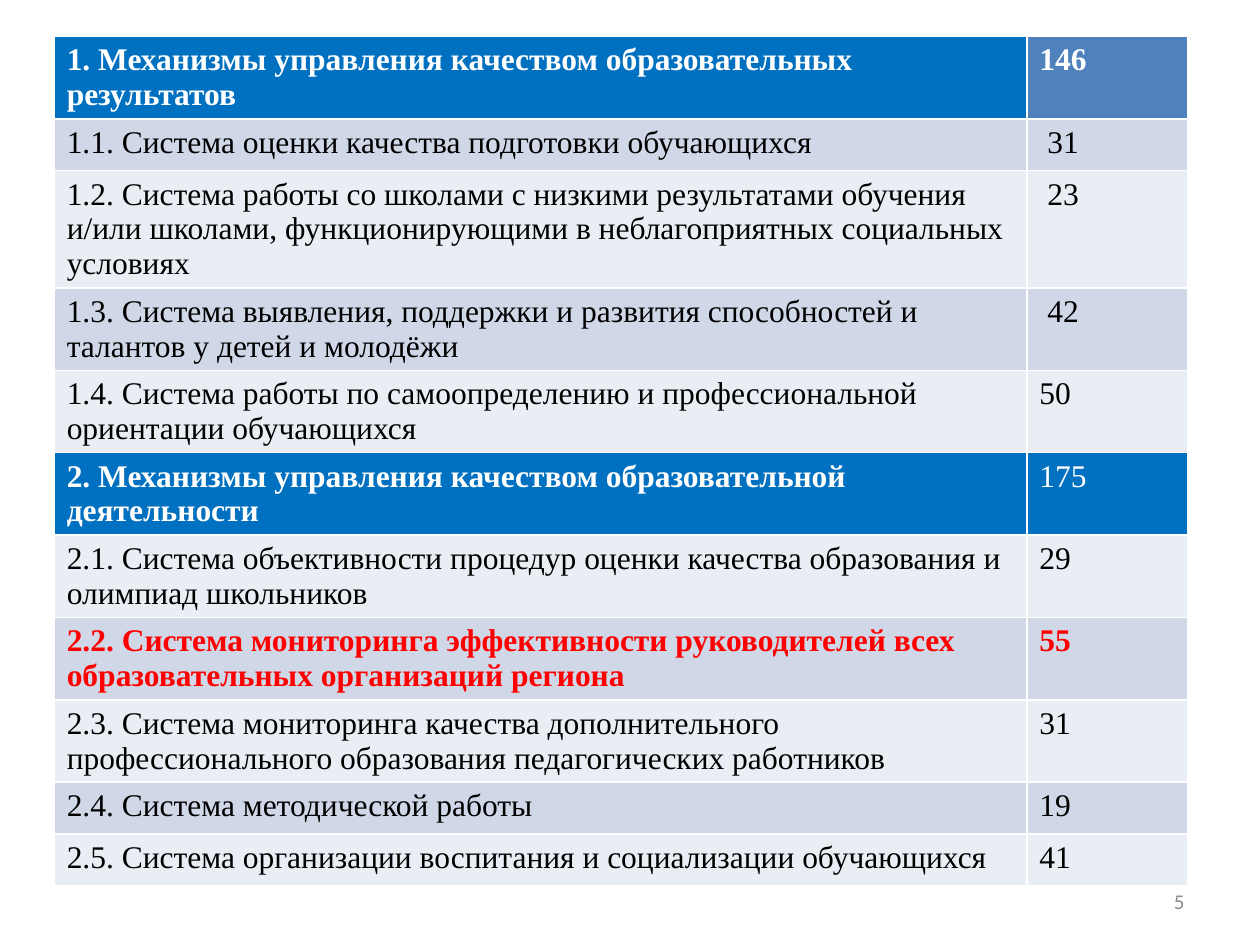
from pptx import Presentation
from pptx.dml.color import RGBColor
from pptx.enum.text import MSO_ANCHOR, PP_ALIGN
from pptx.util import Inches, Pt

MIDDLE = MSO_ANCHOR.MIDDLE
LEFT, RIGHT = PP_ALIGN.LEFT, PP_ALIGN.RIGHT

WHITE = RGBColor(0xFF, 0xFF, 0xFF)
BLACK = RGBColor(0, 0, 0)
RED = RGBColor(0xFF, 0, 0)
GRAY = RGBColor(0x8C, 0x8C, 0x8C)
SECTION_BLUE = RGBColor(0x00, 0x70, 0xC0)
TOTAL_BLUE = RGBColor(0x4F, 0x81, 0xBD)
BANDS = (RGBColor(0xE9, 0xED, 0xF4), RGBColor(0xD0, 0xD8, 0xE8))

SECTION, ITEM, ACCENT = "section", "item", "accent"
TEXT_COLORS = {SECTION: WHITE, ITEM: BLACK, ACCENT: RED}

# kind of row, name (one line per paragraph), score
ROWS = [
    (SECTION, "1. Механизмы управления качеством образовательных результатов", "146"),
    (ITEM, "1.1. Система оценки качества подготовки обучающихся", " 31"),
    (ITEM, "1.2. Система работы со школами с низкими результатами обучения и/или "
           "школами, функционирующими в неблагоприятных социальных условиях", " 23"),
    (ITEM, "1.3. Система выявления, поддержки и развития способностей и талантов "
           "у детей и молодёжи", " 42"),
    (ITEM, "1.4. Система работы по самоопределению и профессиональной ориентации "
           "обучающихся", "50"),
    (SECTION, "2. Механизмы управления качеством образовательной деятельности", "175"),
    (ITEM, "2.1. Система объективности процедур оценки качества образования и "
           "олимпиад школьников", "29"),
    (ACCENT, "2.2. Система мониторинга эффективности руководителей всех\n"
             "образовательных организаций региона", "55"),
    (ITEM, "2.3. Система мониторинга качества дополнительного профессионального "
           "образования педагогических работников", "31"),
    (ITEM, "2.4. Система методической работы", "19"),
    (ITEM, "2.5. Система организации воспитания и социализации обучающихся", "41"),
]
PAGE_NUMBER = "5"

TABLE_LEFT, TABLE_TOP = 0.43, 0.29
COLUMN_WIDTHS = (7.72, 1.28)
ROW_HEIGHT = 0.41  # minimum; rows grow with their text


def write(tf, text, font, size, color, bold=False, align=LEFT):
    for i, line in enumerate(text.split("\n")):
        p = tf.paragraphs[0] if i == 0 else tf.add_paragraph()
        p.alignment = align
        r = p.add_run()
        r.text = line
        r.font.name = font
        r.font.size = Pt(size)
        r.font.bold = bold
        r.font.color.rgb = color


def add_score_table(s):
    table = s.shapes.add_table(
        len(ROWS), len(COLUMN_WIDTHS), Inches(TABLE_LEFT), Inches(TABLE_TOP),
        Inches(sum(COLUMN_WIDTHS)), Inches(ROW_HEIGHT * len(ROWS))).table
    for column, width in zip(table.columns, COLUMN_WIDTHS):
        column.width = Inches(width)
    for i, (kind, *texts) in enumerate(ROWS):
        table.rows[i].height = Inches(ROW_HEIGHT)
        for j, text in enumerate(texts):
            cell = table.cell(i, j)
            fill = SECTION_BLUE if kind == SECTION else BANDS[i % 2]
            bold = kind != ITEM
            if j == 1 and kind == SECTION:
                # only the first total is bold, on the lighter blue
                bold = i == 0
                fill = TOTAL_BLUE if i == 0 else SECTION_BLUE
            cell.fill.solid()
            cell.fill.fore_color.rgb = fill
            write(cell.text_frame, text, "Times New Roman", 18, TEXT_COLORS[kind], bold)


def add_page_number(s):
    box = s.shapes.add_textbox(Inches(7.17), Inches(6.95), Inches(2.33), Inches(0.4))
    tf = box.text_frame
    tf.word_wrap = True
    tf.vertical_anchor = MIDDLE
    write(tf, PAGE_NUMBER, "Calibri", 12, GRAY, align=RIGHT)


def main():
    prs = Presentation()
    prs.slide_width, prs.slide_height = Inches(10), Inches(7.5)
    s = prs.slides.add_slide(prs.slide_layouts[6])
    add_score_table(s)
    add_page_number(s)
    prs.save("out.pptx")


if __name__ == "__main__":
    main()
